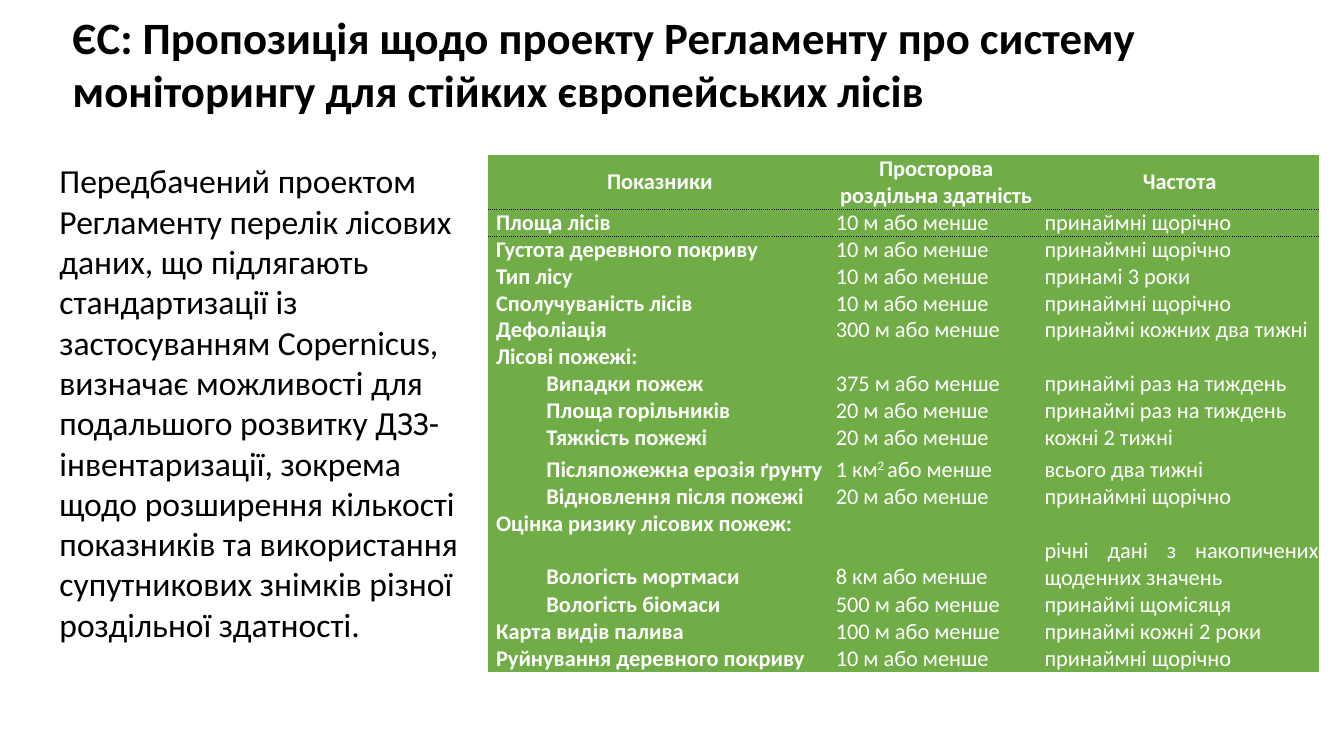
from dataclasses import dataclass
from typing import Any

import pptx
import pptx.dml.color
import pptx.enum.text
import pptx.oxml
import pptx.util
from pptx.oxml.ns import nsdecls, qn

Align = pptx.enum.text.PP_ALIGN
Anchor = pptx.enum.text.MSO_ANCHOR


@dataclass(frozen=True)
class Theme:
    font: str = "Calibri"
    ink: str = "000000"
    paper: str = "FFFFFF"
    green: str = "70AD47"
    title: int = 32
    body: int = 24
    cell: int = 16
    rule: float = 0.25


@dataclass(frozen=True)
class Box:
    col: float
    row: float
    cols: float
    rows: float


@dataclass(frozen=True)
class Indicator:
    name: str
    resolution: str = ""
    frequency: str = ""
    nested: bool = False
    rows: float = 3.47


THEME = Theme()
GRID = 100
WIDTH = pptx.util.Inches(13.33)
HEIGHT = pptx.util.Inches(7.5)
TITLE_BOX = Box(4.65, 1.87, 88.07, 12.93)
BODY_BOX = Box(3.68, 20.53, 31.51, 66)
TABLE_BOX = Box(36.31, 20.53, 61.82, 69.07)
COLUMNS = (25.58, 15.53, 20.71)
HEADER_ROWS = 6.13
NAME_INDENT, NESTED_INDENT, VALUE_INDENT = 0.6, 4.35, 0.3
SUPERSCRIPT = "²"
NO_STYLE = "{2D5ABB26-0587-4C30-8999-92F81FD0307C}"

TITLE = ("ЄС: Пропозиція щодо проекту Регламенту про систему "
         "моніторингу для стійких європейських лісів")
BODY = ("Передбачений проектом Регламенту перелік лісових даних, що підлягають "
        "стандартизації із застосуванням Copernicus, визначає можливості для "
        "подальшого розвитку ДЗЗ-інвентаризації, зокрема щодо розширення кількості "
        "показників та використання супутникових знімків різної роздільної здатності.")
HEADERS = ("Показники", "Просторова роздільна здатність", "Частота")
INDICATORS = (
    Indicator("Площа лісів", "10 м або менше", "принаймні щорічно"),
    Indicator("Густота деревного покриву", "10 м або менше", "принаймні щорічно"),
    Indicator("Тип лісу", "10 м або менше", "принамі 3 роки"),
    Indicator("Сполучуваність лісів", "10 м або менше", "принаймні щорічно"),
    Indicator("Дефоліація", "300 м або менше", "принаймі кожних два тижні"),
    Indicator("Лісові пожежі:"),
    Indicator("Випадки пожеж", "375 м або менше", "принаймі раз на тиждень", True),
    Indicator("Площа горільників", "20 м або менше", "принаймі раз на тиждень", True),
    Indicator("Тяжкість пожежі", "20 м або менше", "кожні 2 тижні", True),
    Indicator("Післяпожежна ерозія ґрунту", "1 км² або менше", "всього два тижні", True, 4.27),
    Indicator("Відновлення після пожежі", "20 м або менше", "принаймні щорічно", True),
    Indicator("Оцінка ризику лісових пожеж:"),
    Indicator("Вологість мортмаси", "8 км або менше",
              "річні дані з накопичених щоденних значень", True, 5.73),
    Indicator("Вологість біомаси", "500 м або менше", "принаймі щомісяця", True),
    Indicator("Карта видів палива", "100 м або менше", "принаймі кожні 2 роки"),
    Indicator("Руйнування деревного покриву", "10 м або менше", "принаймні щорічно"),
)


def x(cols: float) -> int:
    return round(WIDTH * cols / GRID)


def y(rows: float) -> int:
    return round(HEIGHT * rows / GRID)


def place(box: Box) -> tuple[int, int, int, int]:
    return x(box.col), y(box.row), x(box.cols), y(box.rows)


def set_font(p: Any, size: int, color: str, bold: bool) -> None:
    p.font.name = THEME.font
    p.font.size = pptx.util.Pt(size)
    p.font.bold = bold
    p.font.color.rgb = pptx.dml.color.RGBColor.from_string(color)


def add_text(s: Any, box: Box, text: str, size: int, bold: bool, anchor: Any) -> None:
    tf = s.shapes.add_textbox(*place(box)).text_frame
    tf.word_wrap = True
    tf.vertical_anchor = anchor
    p = tf.paragraphs[0]
    p.add_run().text = text
    set_font(p, size, THEME.ink, bold)


def add_runs(p: Any, text: str) -> None:
    before, mark, after = text.partition(SUPERSCRIPT)
    p.add_run().text = before
    if mark:
        r = p.add_run()
        r.text = "2 "
        r.font._element.set("baseline", "30000")
        p.add_run().text = after.lstrip()


def fill_cell(cell: Any, text: str, bold: bool, align: Any, anchor: Any,
              indent: float = 0, level: int = 0) -> None:
    cell.margin_left = cell.margin_right = cell.margin_top = cell.margin_bottom = 0
    cell.vertical_anchor = anchor
    cell.fill.solid()
    cell.fill.fore_color.rgb = pptx.dml.color.RGBColor.from_string(THEME.green)
    p = cell.text_frame.paragraphs[0]
    p.alignment = align
    p.level = level
    pPr = p._p.get_or_add_pPr()
    pPr.set("marL", str(x(indent)))
    pPr.set("indent", "0")
    if text:
        add_runs(p, text)
    else:
        p._p.get_or_add_endParaRPr().set("sz", str(THEME.cell * 100))
    set_font(p, THEME.cell, THEME.paper, bold)


def add_border(cell: Any, side: str) -> None:
    width = pptx.util.Pt(THEME.rule)
    line = pptx.oxml.parse_xml(
        f'<a:{side} {nsdecls("a")} w="{width}"><a:solidFill><a:srgbClr val="{THEME.ink}"/>'
        f'</a:solidFill><a:prstDash val="sysDot"/></a:{side}>')
    cell._tc.get_or_add_tcPr().insert(0, line)


def add_indicator_table(s: Any) -> None:
    table = s.shapes.add_table(len(INDICATORS) + 1, len(COLUMNS), *place(TABLE_BOX)).table
    table.first_row = table.horz_banding = False
    table._tbl.tblPr.find(qn("a:tableStyleId")).text = NO_STYLE
    for column, cols in zip(table.columns, COLUMNS):
        column.width = x(cols)
    table.rows[0].height = y(HEADER_ROWS)
    for c, header in enumerate(HEADERS):
        fill_cell(table.cell(0, c), header, True, Align.CENTER, Anchor.MIDDLE)
    for n, item in enumerate(INDICATORS, 1):
        table.rows[n].height = y(item.rows)
        fill_cell(table.cell(n, 0), item.name, True, Align.JUSTIFY, Anchor.BOTTOM,
                  NESTED_INDENT if item.nested else NAME_INDENT, 2 if item.nested else 0)
        for c, value in enumerate((item.resolution, item.frequency), 1):
            fill_cell(table.cell(n, c), value, False, Align.JUSTIFY, Anchor.BOTTOM, VALUE_INDENT)
    for c in range(len(COLUMNS)):
        add_border(table.cell(0, c), "lnB")
        add_border(table.cell(1, c), "lnT")


def main() -> None:
    prs = pptx.Presentation()
    prs.slide_width, prs.slide_height = WIDTH, HEIGHT
    s = prs.slides.add_slide(prs.slide_layouts[6])
    add_text(s, TITLE_BOX, TITLE, THEME.title, True, Anchor.MIDDLE)
    add_indicator_table(s)
    add_text(s, BODY_BOX, BODY, THEME.body, False, Anchor.TOP)
    prs.save("out.pptx")


if __name__ == "__main__":
    main()
